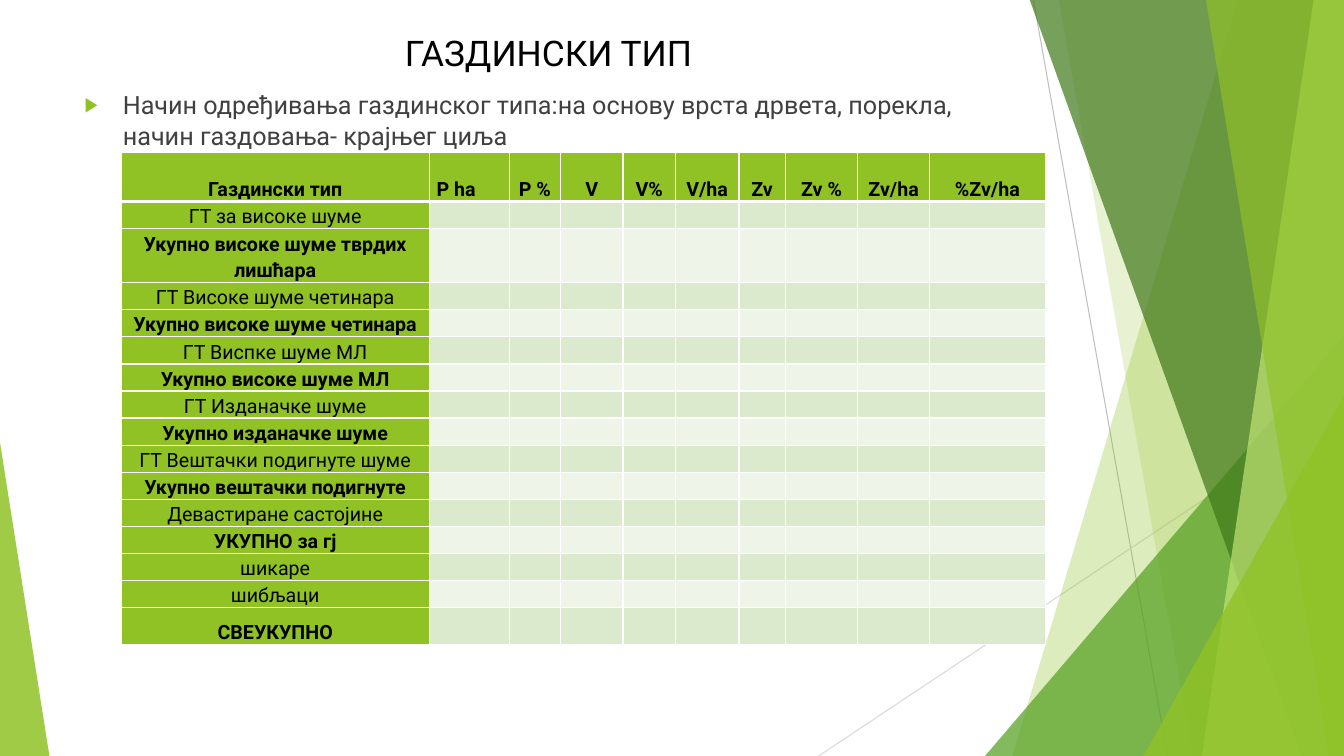
from lxml.etree import SubElement
from pptx import Presentation
from pptx.dml.color import RGBColor
from pptx.enum.shapes import MSO_CONNECTOR, MSO_SHAPE
from pptx.enum.text import MSO_ANCHOR as Anchor, PP_ALIGN as Align
from pptx.oxml.ns import qn
from pptx.util import Inches, Pt

GREEN, WHITE, BLACK = "90C226", "FFFFFF", "000000"
BODY_FILLS = ("EEF4E8", "DBE9CD")
WIDTH, HEIGHT = 13.33, 7.5

HEADERS = ["Газдински тип", "P ha", "P %", "V", "V%", "V/ha", "Zv", "Zv %", "Zv/ha", "%Zv/ha"]
COLUMN_WIDTHS = [3.06, 0.79, 0.51, 0.62, 0.52, 0.63, 0.46, 0.72, 0.71, 1.15]
ROW_LABELS = [
    "ГТ за високе шуме",
    "Укупно високе шуме тврдих лишћара",
    "ГТ Високе шуме четинара",
    "Укупно високе шуме четинара",
    "ГТ Виспке шуме МЛ",
    "Укупно високе шуме МЛ",
    "ГТ Изданачке шуме",
    "Укупно изданачке шуме",
    "ГТ Вештачки подигнуте шуме",
    "Укупно вештачки подигнуте",
    "Девастиране састојине",
    "УКУПНО за гј",
    "шикаре",
    "шибљаци",
    "СВЕУКУПНО",
]
HEADER_HEIGHT, ROW_HEIGHT, LAST_HEIGHT = 0.49, 0.21, 0.37


def color(hex_string):
    return RGBColor.from_string(hex_string)


class SlideBuilder:
    font = "Roboto"
    table_size = 14

    def __init__(self, slide):
        self.slide = slide
        self.shapes = slide.shapes

    def line(self, start, end, line_color):
        points = [Inches(value) for value in (*start, *end)]
        connector = self.shapes.add_connector(MSO_CONNECTOR.STRAIGHT, *points)
        connector.line.color.rgb = color(line_color)
        connector.line.width = Pt(0.75)
        SubElement(connector._element.spPr, qn("a:effectLst"))

    def paint(self, shape, fill, opacity):
        """Fill a shape with a translucent colour, without line or shadow."""
        shape.shadow.inherit = False
        shape.line.fill.background()
        shape.fill.solid()
        shape.fill.fore_color.rgb = color(fill)
        solid_color = shape._element.spPr.find(qn("a:solidFill"))[0]
        SubElement(solid_color, qn("a:alpha"), val=str(opacity * 1000))

    def band(self, top_left, bottom_left, fill, opacity):
        """Draw a full-height band with a slanted left edge, up to the slide's right edge."""
        top = -0.01
        builder = self.shapes.build_freeform(Inches(top_left), Inches(top))
        corners = [(WIDTH, top), (WIDTH, HEIGHT), (bottom_left, HEIGHT)]
        builder.add_line_segments([(Inches(x), Inches(y)) for x, y in corners], close=True)
        self.paint(builder.convert_to_shape(), fill, opacity)

    def triangle(self, left, top, width, apex, fill, opacity):
        """Draw a triangle that stands on the slide's bottom edge."""
        shape = self.shapes.add_shape(
            MSO_SHAPE.ISOSCELES_TRIANGLE,
            Inches(left), Inches(top), Inches(width), Inches(HEIGHT - top))
        shape.adjustments[0] = apex
        self.paint(shape, fill, opacity)

    def run(self, paragraph, text, size, text_color, bold=False):
        run = paragraph.add_run()
        run.text = text
        run.font.name = self.font
        run.font.size = Pt(size)
        run.font.bold = bold
        run.font.color.rgb = color(text_color)

    def text(self, left, top, width, height, text, size, text_color):
        box = self.shapes.add_textbox(Inches(left), Inches(top), Inches(width), Inches(height))
        box.text_frame.word_wrap = True
        paragraph = box.text_frame.paragraphs[0]
        self.run(paragraph, text, size, text_color)
        return paragraph

    def bullet(self, paragraph, indent):
        properties = paragraph._p.get_or_add_pPr()
        properties.set("marL", str(Inches(indent)))
        properties.set("indent", str(-Inches(indent)))
        bullet_color = SubElement(properties, qn("a:buClr"))
        SubElement(bullet_color, qn("a:srgbClr"), val=GREEN)
        SubElement(properties, qn("a:buSzPct"), val="80000")
        SubElement(properties, qn("a:buFont"), typeface="Arial")
        SubElement(properties, qn("a:buChar"), char="▶")

    def borders(self, cell, top, bottom):
        properties = cell._tc.get_or_add_tcPr()
        for side, width in (("L", 1), ("R", 1), ("T", top), ("B", bottom)):
            border = SubElement(properties, qn(f"a:ln{side}"), w=str(Pt(width)))
            fill = SubElement(border, qn("a:solidFill"))
            SubElement(fill, qn("a:srgbClr"), val=WHITE)

    def cell(self, cell, text, fill, bold, align, top_border, bottom_border):
        self.borders(cell, top_border, bottom_border)
        cell.fill.solid()
        cell.fill.fore_color.rgb = color(fill)
        cell.vertical_anchor = Anchor.BOTTOM
        cell.margin_left = cell.margin_right = Inches(0.07)
        cell.margin_top = cell.margin_bottom = 0
        paragraph = cell.text_frame.paragraphs[0]
        paragraph.alignment = align
        paragraph.line_spacing = 1.15
        if text:
            self.run(paragraph, text, self.table_size, BLACK, bold)
        else:
            SubElement(paragraph._p, qn("a:endParaRPr"), sz=str(self.table_size * 100))

    def table(self, left, top, headers, labels, widths, heights):
        frame = self.shapes.add_table(
            len(heights), len(widths), Inches(left), Inches(top),
            Inches(sum(widths)), Inches(sum(heights)))
        table = frame.table
        table.horz_banding = False
        for column, width in zip(table.columns, widths):
            column.width = Inches(width)
        for row, height in zip(table.rows, heights):
            row.height = Inches(height)

        for index, header in enumerate(headers):
            align = Align.LEFT if index == 1 else Align.CENTER
            self.cell(table.cell(0, index), header, GREEN, True, align, 1, 3)
        for row, label in enumerate(labels, 1):
            is_total = "укупно" in label.lower()
            top_border = 3 if row == 1 else 1
            for column in range(len(headers)):
                text = label if column == 0 else ""
                fill = GREEN if column == 0 else BODY_FILLS[row % 2]
                self.cell(table.cell(row, column), text, fill, is_total,
                          Align.CENTER, top_border, 1)


def draw_background(builder):
    builder.line((10.25, 0), (11.58, HEIGHT), "BFBFBF")
    builder.line((WIDTH, 4.03), (8.12, HEIGHT), "D9D9D9")
    builder.band(12.28, 10.04, GREEN, 30)
    builder.band(10.5, 11.83, GREEN, 20)
    builder.triangle(9.77, 3.33, 3.56, 1, "54A021", 72)
    builder.band(10.21, 12.91, "3F7819", 70)
    builder.band(13.03, 11.92, "C0E474", 70)
    builder.band(11.96, 13.18, GREEN, 65)
    builder.triangle(11.34, 3.93, 1.99, 1, GREEN, 80)
    builder.triangle(0, 4.39, 0.49, 0, GREEN, 85)


def main():
    presentation = Presentation()
    presentation.slide_width = Inches(WIDTH)
    presentation.slide_height = Inches(HEIGHT)
    builder = SlideBuilder(presentation.slides.add_slide(presentation.slide_layouts[6]))

    draw_background(builder)
    title = builder.text(0.74, 0.26, 9.4, 0.46, "ГАЗДИНСКИ ТИП", 25.2, BLACK)
    title.alignment = Align.CENTER
    method = builder.text(
        0.74, 0.84, 9.4, 5.77,
        "Начин одређивања газдинског типа:на основу врста дрвета, порекла, "
        "начин газдовања- крајњег циља", 18, "404040")
    method.space_before = Pt(10)
    builder.bullet(method, 0.38)

    row_heights = [HEADER_HEIGHT] + [ROW_HEIGHT] * (len(ROW_LABELS) - 1) + [LAST_HEIGHT]
    builder.table(1.2, 1.51, HEADERS, ROW_LABELS, COLUMN_WIDTHS, row_heights)
    presentation.save("out.pptx")


if __name__ == "__main__":
    main()
